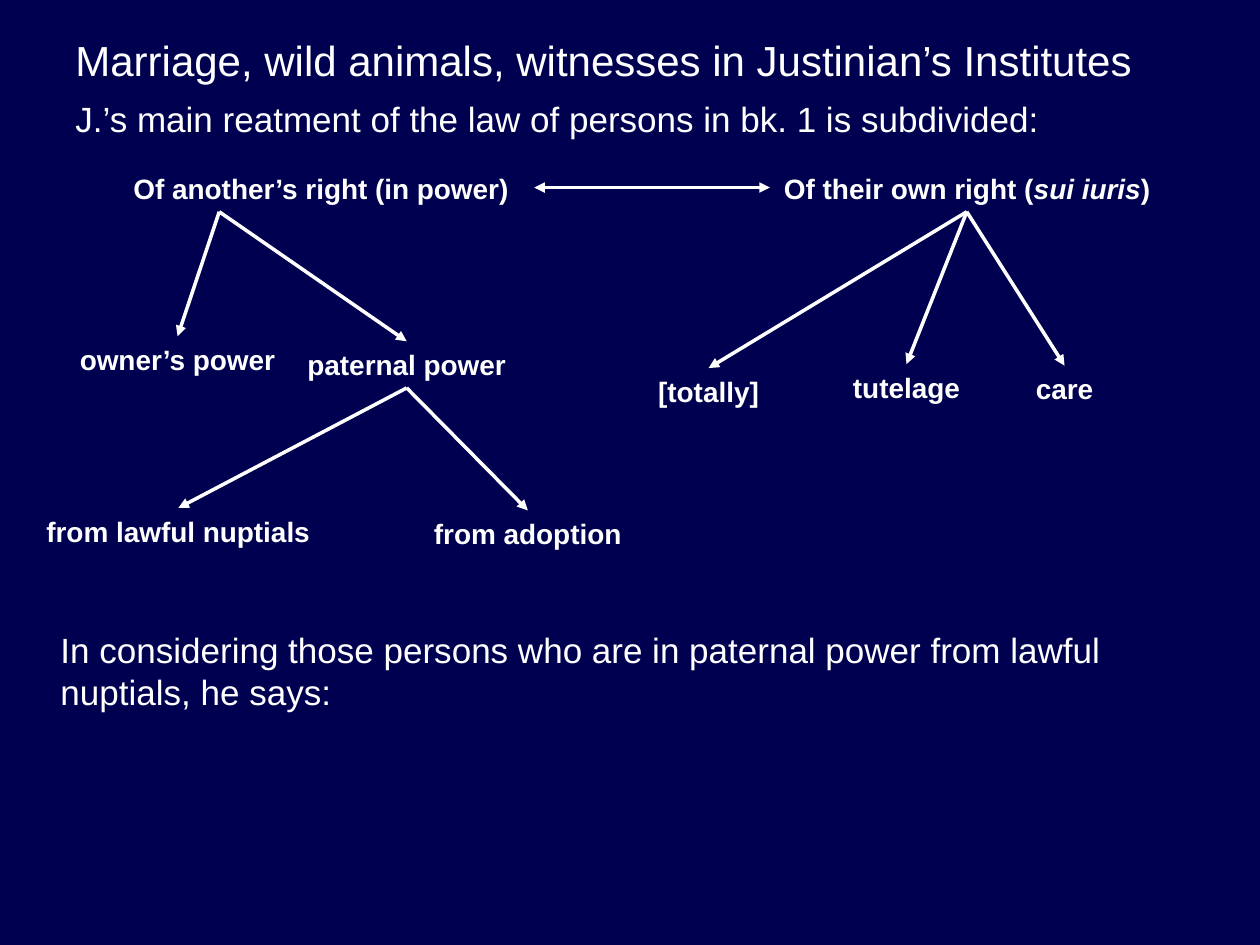
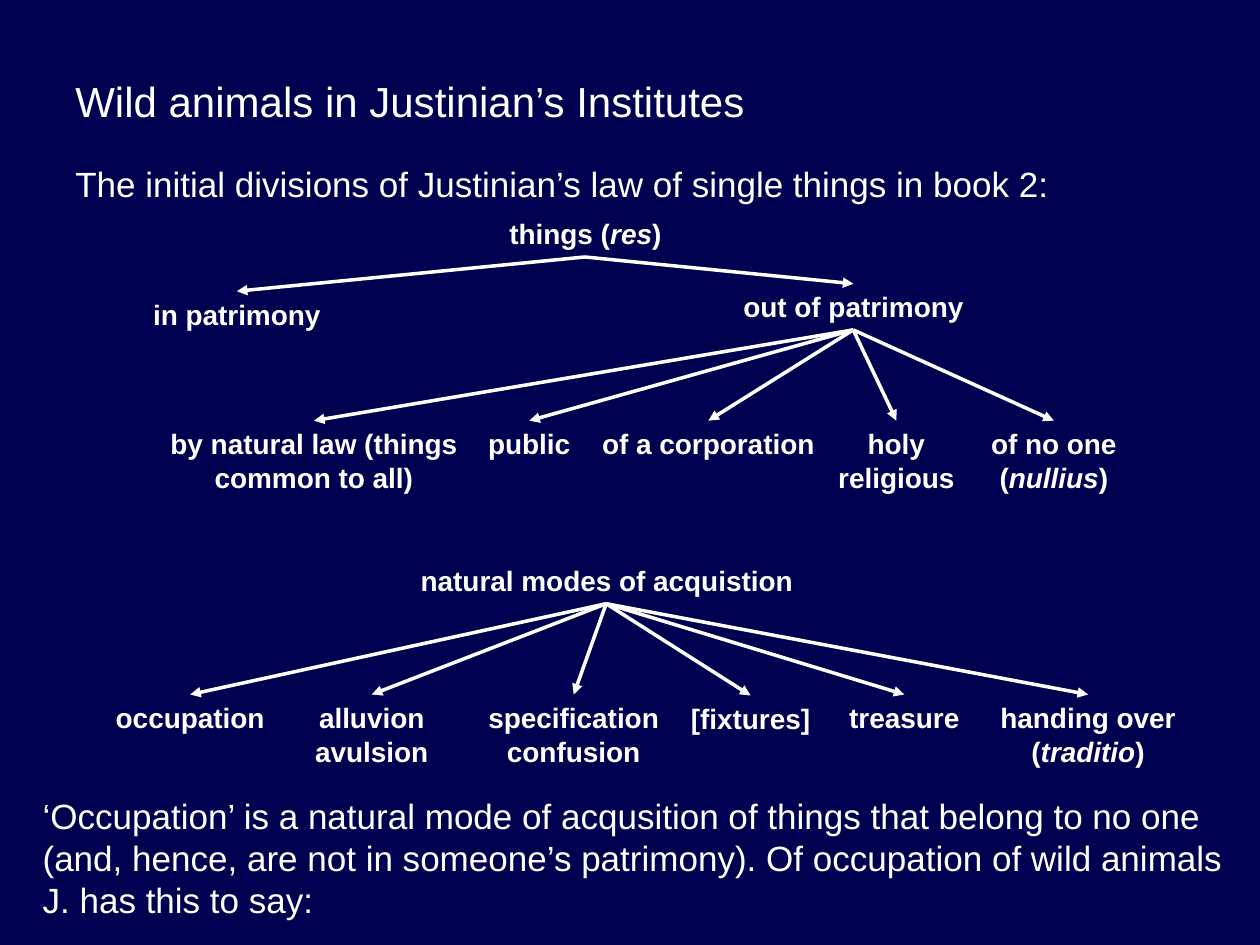
"""Build two slides of tree diagrams on persons and things in Justinian's Institutes."""
import pptx
import pptx.dml.color
import pptx.enum.shapes
import pptx.enum.text
import pptx.oxml
import pptx.oxml.ns
import pptx.util

Cm = pptx.util.Cm
Pt = pptx.util.Pt
NAVY = "000050"
WHITE = "FFFFFF"
TITLE, BODY, LABEL = 24, 20, 16
LINE_H, TWO_LINES_H = 0.94, 1.63


def rgb(value):
    return pptx.dml.color.RGBColor.from_string(value)


def add_text(s, x, y, w, h, text, size):
    tb = s.shapes.add_textbox(Cm(x), Cm(y), Cm(w), Cm(h))
    tf = tb.text_frame
    tf.word_wrap = True
    if size != TITLE:
        tf.auto_size = pptx.enum.text.MSO_AUTO_SIZE.SHAPE_TO_FIT_TEXT
    p = tf.paragraphs[0]
    p.font.name = "Arial"
    p.font.size = Pt(size)
    p.font.color.rgb = rgb(WHITE)
    if size == LABEL:
        p.font.bold = True
        p.alignment = pptx.enum.text.PP_ALIGN.CENTER
    for i, line in enumerate(text.split("\n")):
        if i:
            p.add_line_break()
        for j, part in enumerate(line.split("*")):
            if part:
                r = p.add_run()
                r.text = part
                if j % 2:
                    r.font.italic = True


slides = [
    {
        "texts": [
            (1.27, 0.58, 24.13, 1.14, "Marriage, wild animals, witnesses in Justinian’s Institutes", TITLE),
            (1.27, 1.85, 24.13, 1.12, "J.’s main reatment of the law of persons in bk. 1 is subdivided:", BODY),
            (2.18, 3.33, 8.59, LINE_H, "Of another’s right (in power)", LABEL),
            (15.52, 3.33, 7.95, LINE_H, "Of their own right (*sui iuris*)", LABEL),
            (0.97, 12.55, 24.08, 1.96,
             "In considering those persons who are in paternal power from lawful nuptials, he says:", BODY),
        ],
        "trees": [
            ((4.42, 4.27), [
                (1.22, 6.78, 4.72, LINE_H, "owner’s power"),
                (5.89, 6.88, 4.62, LINE_H, "paternal power"),
            ]),
            ((8.2, 7.82), [
                (0.61, 10.24, 5.97, LINE_H, "from lawful nuptials"),
                (8.33, 10.29, 4.62, LINE_H, "from adoption"),
            ]),
            ((19.49, 4.27), [
                (11.76, 7.42, 5.05, LINE_H, "[totally]"),
                (16.79, 7.34, 2.97, LINE_H, "tutelage"),
                (19.86, 7.37, 3.2, LINE_H, "care"),
            ]),
        ],
        "opposites": [(10.77, 3.78, 15.52, 3.78)],
    },
    {
        "texts": [
            (1.27, 1.4, 24.13, 1.35, "Wild animals in Justinian’s Institutes", TITLE),
            (1.27, 3.15, 23.67, 1.12, "The initial divisions of Justinian’s law of single things in book 2:", BODY),
            (9.3, 4.24, 5, LINE_H, "things (*res*)", LABEL),
            (4.78, 11.23, 14.91, LINE_H, "natural modes of acquistion", LABEL),
            (0.61, 15.9, 24.36, 2.82,
             "‘Occupation’ is a natural mode of acqusition of things that belong to no one "
             "(and, hence, are not in someone’s patrimony). Of occupation of wild animals "
             "J. has this to say:", BODY),
        ],
        "trees": [
            ((11.79, 5.18), [
                (2.54, 5.87, 4.47, LINE_H, "in patrimony"),
                (13.61, 5.72, 7.19, LINE_H, "out of patrimony"),
            ]),
            ((17.2, 6.65), [
                (2.95, 8.48, 6.76, TWO_LINES_H, "by natural law (things common to all)"),
                (9.55, 8.48, 2.24, LINE_H, "public"),
                (11.79, 8.48, 4.98, LINE_H, "of a corporation"),
                (16.56, 8.48, 3.02, TWO_LINES_H, "holy\nreligious"),
                (19.63, 8.48, 3.23, TWO_LINES_H, "of no one\n(*nullius*)"),
            ]),
            ((12.22, 12.17), [
                (1.83, 14, 4.01, LINE_H, "occupation"),
                (4.32, 14, 6.35, TWO_LINES_H, "alluvion\navulsion"),
                (7.49, 14, 8.15, TWO_LINES_H, "specification\nconfusion"),
                (11.79, 14.02, 6.68, LINE_H, "[fixtures]"),
                (14.71, 14, 7.04, LINE_H, "treasure"),
                (18.47, 14, 6.93, TWO_LINES_H, "handing over\n(*traditio*)"),
            ]),
        ],
        "opposites": [],
    },
]

prs = pptx.Presentation()
prs.slide_width = Cm(25.4)
prs.slide_height = Cm(19.05)
fill = prs.slide_master.background.fill
fill.solid()
fill.fore_color.rgb = rgb(NAVY)

for content in slides:
    s = prs.slides.add_slide(prs.slide_layouts[6])
    for text in content["texts"]:
        add_text(s, *text)

    arrows = [(line, ["headEnd", "tailEnd"]) for line in content["opposites"]]
    for (root_x, root_y), leaves in content["trees"]:
        for x, y, w, h, label in leaves:
            add_text(s, x, y, w, h, label, LABEL)
            arrows.append(((root_x, root_y, x + w / 2, y), ["tailEnd"]))

    for ends, heads in arrows:
        cn = s.shapes.add_connector(pptx.enum.shapes.MSO_CONNECTOR.STRAIGHT, *map(Cm, ends))
        cn.line.color.rgb = rgb(WHITE)
        cn.line.width = Pt(2)
        ln = cn.line._get_or_add_ln()
        for head in heads:
            el = pptx.oxml.parse_xml(f'<a:{head} {pptx.oxml.ns.nsdecls("a")} type="triangle"/>')
            ln.append(el)
        cn._element.spPr.append(pptx.oxml.parse_xml(f'<a:effectLst {pptx.oxml.ns.nsdecls("a")}/>'))

prs.save("out.pptx")
